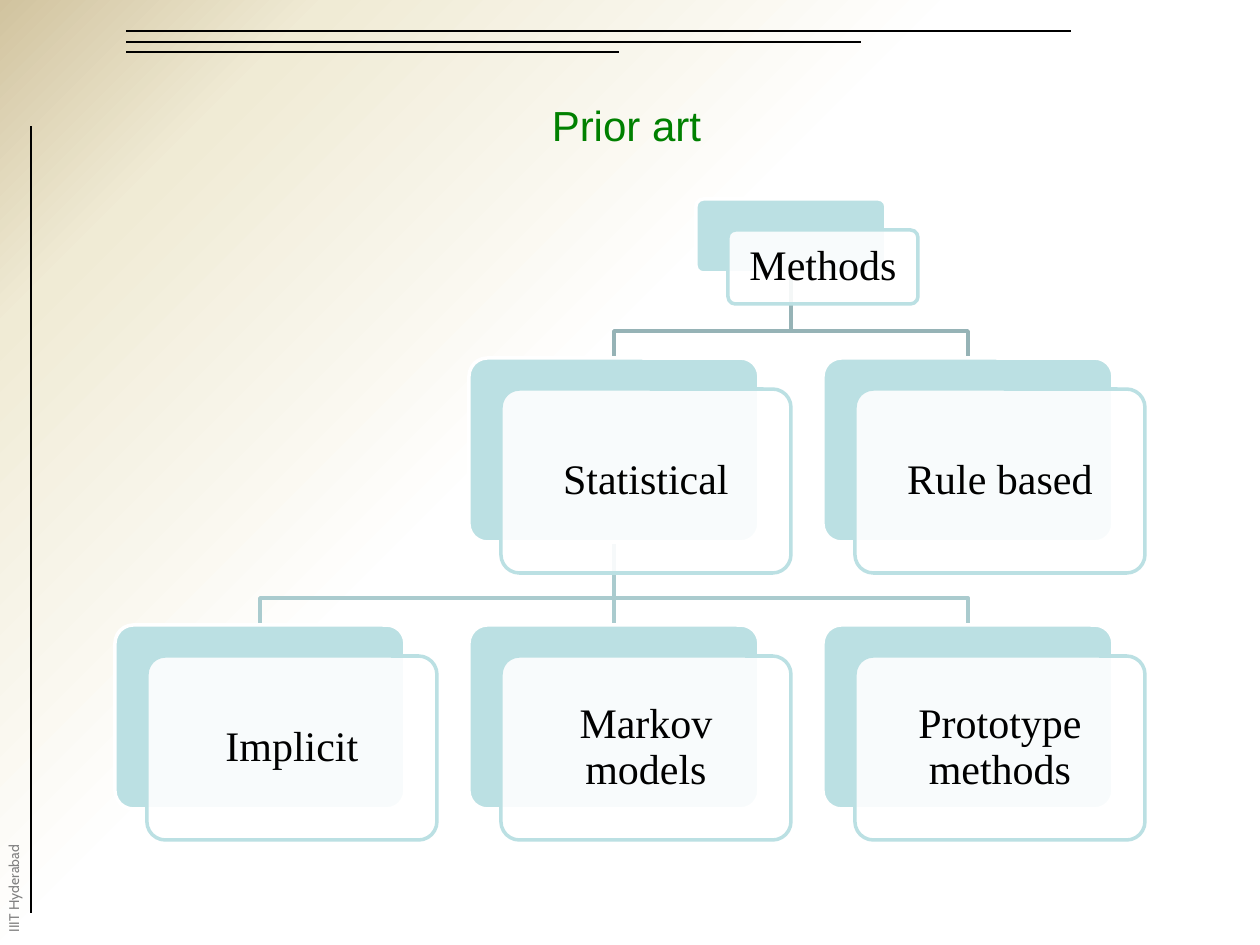
"""Build the "Prior art" slide: a hierarchy of methods on a beige gradient."""
from pptx import Presentation
from pptx.dml.color import RGBColor
from pptx.enum.shapes import MSO_CONNECTOR, MSO_SHAPE
from pptx.enum.text import MSO_ANCHOR, PP_ALIGN
from pptx.oxml import parse_xml
from pptx.oxml.ns import nsdecls, qn
from pptx.util import Emu, Pt

SCALE = 914400 / 126
TEAL, WHITE, BLACK = "BBE0E3", "FFFFFF", "000000"
color = RGBColor.from_string


def px(*lengths):
    return [Emu(round(length * SCALE)) for length in lengths]


def write(shape, text, font_name, size, font_color, alignment=PP_ALIGN.CENTER, spacing=1.0):
    text_frame = shape.text_frame
    text_frame.text = text
    text_frame.word_wrap = True
    text_frame.vertical_anchor = MSO_ANCHOR.MIDDLE
    paragraph = text_frame.paragraphs[0]
    paragraph.alignment = alignment
    paragraph.line_spacing = spacing
    font = paragraph.runs[0].font
    font.name, font.size = font_name, Pt(size)
    font.color.rgb = color(font_color)


presentation = Presentation()
presentation.slide_width, presentation.slide_height = px(1260, 945)
slide = presentation.slides.add_slide(presentation.slide_layouts[6])
shapes = slide.shapes

stops = "".join(
    f'<a:gs pos="{position}000"><a:srgbClr val="{stop_color}"/></a:gs>'
    for position, stop_color in [(56, WHITE), (85, "F0EBD5"), (100, "D1C39F")]
)
slide.element.cSld.insert(0, parse_xml(
    f'<p:bg {nsdecls("p", "a")}><p:bgPr><a:gradFill rotWithShape="1"><a:gsLst>{stops}</a:gsLst>'
    '<a:path path="circle"><a:fillToRect l="100000" t="100000"/></a:path>'
    '</a:gradFill><a:effectLst/></p:bgPr></p:bg>'
))

for ends in [(126, 31, 1071, 31), (126, 42, 861, 42), (126, 52, 619, 52), (31, 126, 31, 913)]:
    rule = shapes.add_connector(MSO_CONNECTOR.STRAIGHT, *px(*ends))
    rule.line.color.rgb = color(BLACK)
    rule.line.width = Pt(0.75)
    rule.element.spPr.append(parse_xml(f'<a:effectLst {nsdecls("a")}/>'))

institute = shapes.add_textbox(*px(-43, 872, 116, 29))
institute.rotation = 270
write(institute, "IIIT Hyderabad", "Cabin", 8, "808080", PP_ALIGN.LEFT, 0.83)

title = shapes.add_textbox(*px(91, 71, 1071, 107))
write(title, "Prior art", "Arial", 24, "008000")

columns = [115 + 354 * index for index in range(3)]
upper, lower = 358, 625
card_width, card_height = 290, 184
centers = [left + card_width // 2 for left in columns]

branches = [
    (791, 273, centers[2], upper, "96B3B6"),
    (centers[1], upper + card_height, centers[2], lower, "AACBCE"),
    (centers[1], upper + card_height, centers[0], lower, "AACBCE"),
    (791, 273, centers[1], upper, "96B3B6"),
]
for parent_x, parent_y, child_x, child_y, branch_color in branches:
    bend = child_y - 27
    builder = shapes.build_freeform(parent_x, parent_y, scale=SCALE)
    builder.add_line_segments([(parent_x, bend), (child_x, bend), (child_x, child_y)], close=False)
    branch = builder.convert_to_shape()
    branch.shadow.inherit = False
    branch.fill.background()
    branch.line.color.rgb = color(branch_color)
    branch.line.width = Pt(2)

cards = [
    ("Methods", 696, 199, 190, 74),
    ("Statistical", columns[1], upper, card_width, card_height),
    ("Implicit", columns[0], lower, card_width, card_height),
    ("Markov models", columns[1], lower, card_width, card_height),
    ("Prototype methods", columns[2], lower, card_width, card_height),
    ("Rule based", columns[2], upper, card_width, card_height),
]
backs = {}
for label, left, top, width, height in cards:
    for shift_x, shift_y, fill_color, line_color in [(0, 0, TEAL, WHITE), (32, 31, WHITE, TEAL)]:
        card = shapes.add_shape(
            MSO_SHAPE.ROUNDED_RECTANGLE, *px(left + shift_x, top + shift_y, width, height))
        card.adjustments[0] = 0.1
        card.shadow.inherit = False
        card.fill.solid()
        card.fill.fore_color.rgb = color(fill_color)
        card.line.color.rgb = color(line_color)
        card.line.width = Pt(2)
        backs.setdefault(label, card)
    fill = card.element.spPr.find(qn("a:solidFill"))
    fill[0].append(parse_xml(f'<a:alpha {nsdecls("a")} val="90000"/>'))
    write(card, label, "Times New Roman", 24, BLACK, spacing=0.9)

stem = shapes.add_connector(MSO_CONNECTOR.STRAIGHT, 0, 0, 0, 0)
stem.begin_connect(backs["Statistical"], 2)
stem.end_connect(backs["Markov models"], 0)
stem.line.color.rgb = color("AACBCE")
stem.line.width = Pt(2)
stem.element.spPr.append(parse_xml(f'<a:effectLst {nsdecls("a")}/>'))
backs["Methods"].element.addprevious(stem.element)

presentation.save("out.pptx")
